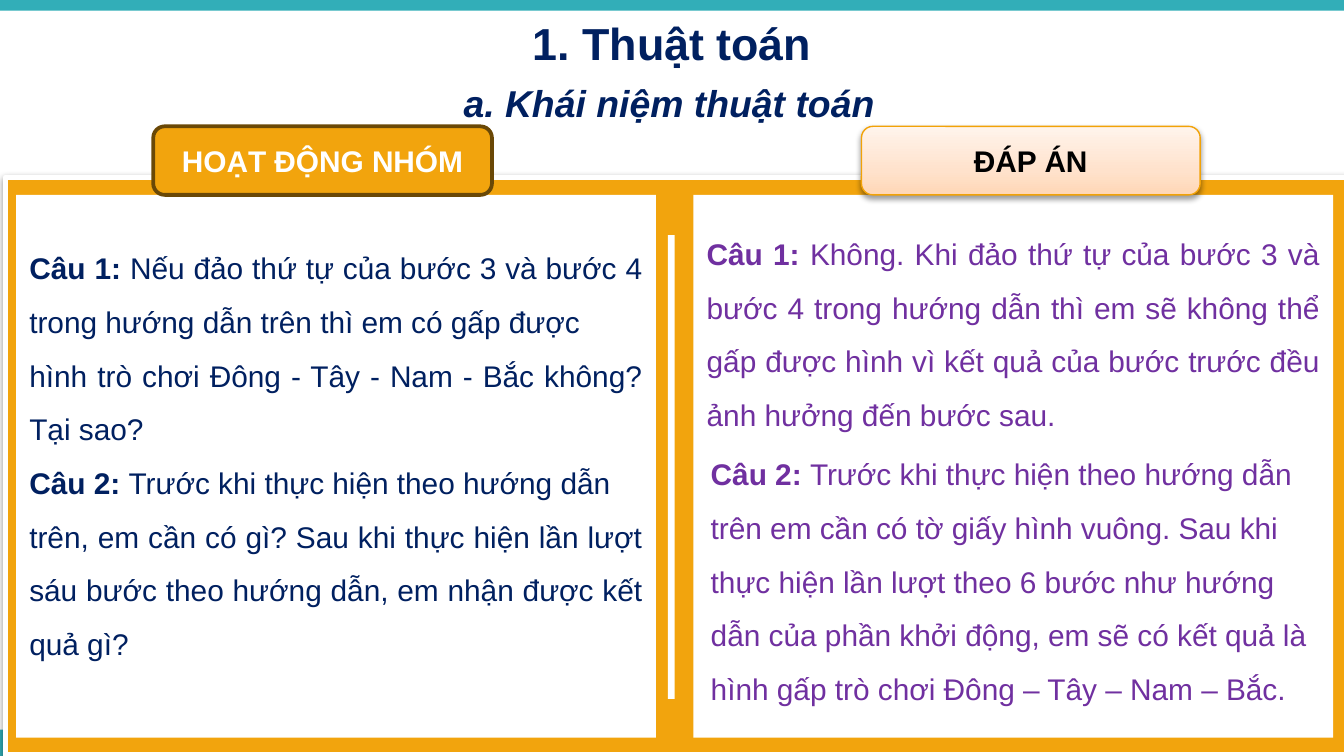
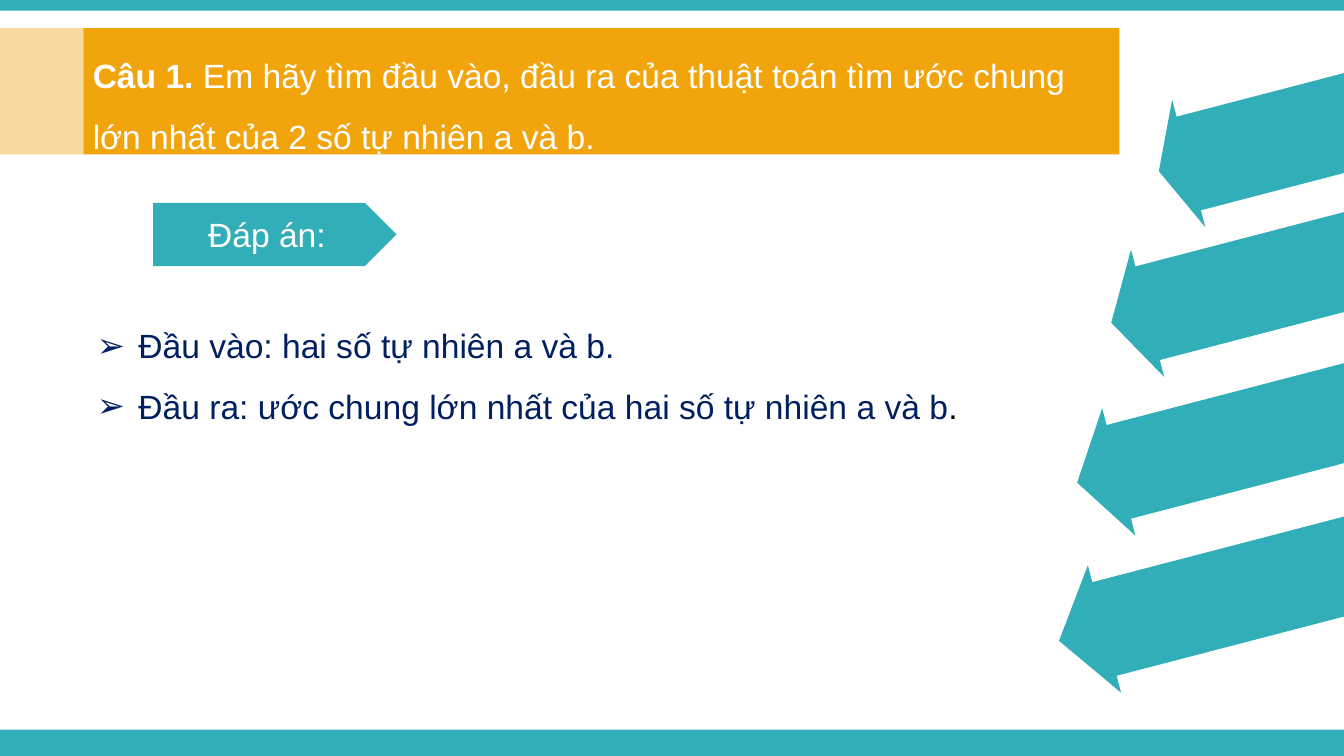
from copy import deepcopy

from lxml.etree import SubElement
from pptx import Presentation
from pptx.dml.color import RGBColor
from pptx.enum.shapes import MSO_SHAPE as Preset
from pptx.enum.text import MSO_ANCHOR as Anchor, MSO_AUTO_SIZE as AutoSize, PP_ALIGN as Align
from pptx.oxml.ns import qn
from pptx.util import Inches, Pt

FONT = "Arial"
COLORS = {
    "teal": "32AEB8",
    "orange": "F2A40D",
    "brown": "6A4806",
    "amber": "F2A207",
    "navy": "002060",
    "purple": "7030A0",
    "white": "FFFFFF",
    "black": "000000",
}
PEACH_STOPS = [(0, "FFD7B6"), (0.35, "FFE2CC"), (1, "FFF4EC")]

PANEL_TOP, PANEL_WIDTH, PANEL_HEIGHT = 1.45, 4.76, 4.04
TAB_TOP, TAB_WIDTH, TAB_HEIGHT = 0.94, 2.52, 0.51

ARROW_HEIGHT, ARROW_ROTATION = 0.98, 345.4
SHAFT_TOP, SHAFT_BOTTOM = 0.13, 0.85
# left, top, width, head length, slant of the far end
ARROWS = [
    (8.59, 0.53, 2.02, 0.23, 0.07),
    (8.23, 1.61, 2.39, 0.28, 0.10),
    (7.97, 2.75, 2.79, 0.32, 0.11),
    (7.83, 3.89, 3.08, 0.35, 0.12),
]

# Each paragraph is a list of (text, bold) runs.
QUESTIONS = [
    [("Câu 1: ", True),
     ("Nếu đảo thứ tự của bước 3 và bước 4 trong hướng dẫn trên thì em có gấp được", False)],
    [("hình trò chơi Đông - Tây - Nam - Bắc không? Tại sao?", False)],
    [("Câu 2: ", True), ("Trước khi thực hiện theo hướng dẫn", False)],
    [("trên, em cần có gì? Sau khi thực hiện lần lượt sáu bước theo hướng dẫn, "
      "em nhận được kết quả gì?", False)],
]
ANSWER_1 = [
    [("Câu 1: ", True),
     ("Không. Khi đảo thứ tự của bước 3 và bước 4 trong hướng dẫn thì em sẽ không thể "
      "gấp được hình vì kết quả của bước trước đều ảnh hưởng đến bước sau.", False)],
]
ANSWER_2 = [
    [("Câu 2: ", True), ("Trước khi thực hiện theo hướng dẫn", False)],
    [("trên em cần có tờ giấy hình vuông. Sau khi", False)],
    [("thực hiện lần lượt theo 6 bước như hướng", False)],
    [("dẫn của phần khởi động, em sẽ có kết quả là", False)],
    [("hình gấp trò chơi Đông – Tây – Nam – Bắc.", False)],
]


def rgb(name):
    return RGBColor.from_string(COLORS[name])


def place(shape, left, top, width, height):
    shape.left, shape.top = Inches(left), Inches(top)
    shape.width, shape.height = Inches(width), Inches(height)


def paint(shape, fill, line=None, line_width=0):
    shape.shadow.inherit = False
    shape.fill.solid()
    shape.fill.fore_color.rgb = rgb(fill)
    if line:
        shape.line.color.rgb = rgb(line)
        shape.line.width = Pt(line_width)
    else:
        shape.line.fill.background()


def add_block(page, preset, left, top, width, height, fill, line=None, line_width=0):
    block = page.shapes.add_shape(
        preset, Inches(left), Inches(top), Inches(width), Inches(height))
    paint(block, fill, line, line_width)
    return block


def add_soft_shadow(shape):
    effects = shape.element.spPr.find(qn("a:effectLst"))
    shadow = SubElement(effects, qn("a:outerShdw"), blurRad=str(Pt(3.1)),
                        dist=str(Pt(1.6)), dir="5400000", rotWithShape="0")
    color = SubElement(shadow, qn("a:srgbClr"), val=COLORS["black"])
    SubElement(color, qn("a:alpha"), val="38000")


def set_opacity(shape, percent):
    color = shape.element.spPr.find(qn("a:solidFill")).find(qn("a:srgbClr"))
    SubElement(color, qn("a:alpha"), val=str(percent * 1000))


def fill_peach(shape):
    """Fill with a three-stop gradient that gets lighter upwards."""
    shape.fill.gradient()
    shape.fill.gradient_angle = 90
    stop_list = shape.element.spPr.find(".//" + qn("a:gsLst"))
    stop_list.insert(1, deepcopy(stop_list[0]))
    for stop, (position, color) in zip(shape.fill.gradient_stops, PEACH_STOPS):
        stop.position = position
        stop.color.rgb = RGBColor.from_string(color)


def add_run(para, text, size, color, bold=False, italic=False):
    span = para.add_run()
    span.text = text
    font = span.font
    font.name, font.size = FONT, Pt(size)
    font.bold, font.italic = bold, italic
    font.color.rgb = rgb(color)


def write(shape, paragraphs, size, color, align=Align.LEFT, anchor=Anchor.TOP,
          spacing=1.0, before=0, italic=False):
    frame = shape.text_frame
    frame.word_wrap = True
    frame.auto_size = AutoSize.NONE
    frame.vertical_anchor = anchor
    for index, runs in enumerate(paragraphs):
        para = frame.add_paragraph() if index else frame.paragraphs[0]
        para.alignment = align
        para.line_spacing = spacing
        para.space_before = Pt(before)
        for text, bold in runs:
            add_run(para, text, size, color, bold, italic)
    return frame


def set_bullet(para, char=None, indent=0):
    """Give the paragraph a hanging bullet, or none without a character."""
    props = para._p.get_or_add_pPr()
    props.set("marL", str(Inches(indent)))
    props.set("indent", str(-Inches(indent)))
    if char:
        SubElement(props, qn("a:buFont"), typeface=FONT)
        SubElement(props, qn("a:buChar"), char=char)
    else:
        SubElement(props, qn("a:buNone"))


def add_heading(placeholder, box, text, size, italic=False):
    place(placeholder, *box)
    frame = write(placeholder, [[(text, True)]], size, "navy", Align.CENTER,
                  Anchor.MIDDLE, before=size * 0.2, italic=italic)
    set_bullet(frame.paragraphs[0])


def add_tab(page, left, text, text_color, fill, line, line_width):
    tab = add_block(page, Preset.ROUNDED_RECTANGLE, left, TAB_TOP, TAB_WIDTH, TAB_HEIGHT,
                    fill, line, line_width)
    write(tab, [[(text, True)]], 16, text_color, Align.CENTER, Anchor.MIDDLE)
    return tab


def add_panel(page, left, paragraphs, color, anchor):
    panel = add_block(page, Preset.RECTANGLE, left, PANEL_TOP, PANEL_WIDTH, PANEL_HEIGHT, "white")
    return write(panel, paragraphs, 16, color, Align.JUSTIFY, anchor, spacing=1.5)


def add_arrow(page, left, top, width, head, slant):
    outline = [
        (width, SHAFT_TOP), (width - slant, SHAFT_BOTTOM), (head, SHAFT_BOTTOM),
        (head, ARROW_HEIGHT), (0, ARROW_HEIGHT / 2), (head, 0), (head, SHAFT_TOP),
    ]
    points = [(Inches(left + x), Inches(top + y)) for x, y in outline]
    builder = page.shapes.build_freeform(*points[0])
    builder.add_line_segments(points[1:], close=True)
    arrow = builder.convert_to_shape()
    paint(arrow, "teal")
    arrow.rotation = ARROW_ROTATION


def add_master_bands(deck, page):
    """Draw the top and bottom bands and hand them to the slide master."""
    for top, height in ((5.43, 0.2), (0, 0.08)):
        band = add_block(page, Preset.RECTANGLE, 0, top, 10, height, "teal")
        deck.slide_master.shapes.element.append(band.element)


def build_group_work(page):
    title, subtitle = page.placeholders
    add_heading(title, (0, 0, 10, 0.63), "1. Thuật toán", 24)
    add_heading(subtitle, (-0.02, 0.61, 10, 0.31), "a. Khái niệm thuật toán", 20, italic=True)

    board = add_block(page, Preset.RECTANGLE, 0.04, 1.32, 10, 4.3, "orange", "white", 3)
    add_soft_shadow(board)
    add_block(page, Preset.RECTANGLE, 4.97, 1.75, 0.05, 3.45, "white")

    questions = add_panel(page, 0.12, QUESTIONS, "navy", Anchor.MIDDLE)
    questions.margin_bottom = Inches(0.34)
    add_tab(page, 1.14, "HOẠT ĐỘNG NHÓM", "white", "orange", "brown", 2)

    answers = add_panel(page, 5.16, ANSWER_1, "purple", Anchor.TOP)
    answers.margin_top = Inches(0.17)
    answer_tab = add_tab(page, 6.41, "ĐÁP ÁN", "black", "white", "amber", 0.75)
    fill_peach(answer_tab)
    add_soft_shadow(answer_tab)

    second_answer = page.shapes.add_textbox(
        Inches(5.19), Inches(3.21), Inches(5), Inches(2.12))
    write(second_answer, ANSWER_2, 16, "purple", Align.JUSTIFY, spacing=1.5)


def build_exercise(page):
    question, answer = page.placeholders
    add_block(page, Preset.RECTANGLE, 0.62, 0.21, 7.71, 0.94, "orange")
    edge = add_block(page, Preset.RECTANGLE, 0, 0.21, 0.62, 0.94, "orange")
    set_opacity(edge, 40)
    for arrow in ARROWS:
        add_arrow(page, *arrow)

    page.shapes.element.append(question.element)  # in front of the orange bar
    place(question, 0.59, 0.21, 7.47, 1.01)
    write(question, [[
        ("Câu 1. ", True),
        ("Em hãy tìm đầu vào, đầu ra của thuật toán tìm ước chung lớn nhất "
         "của 2 số tự nhiên a và b.", False),
    ]], 18, "white", spacing=1.5)

    place(answer, 0.62, 2.22, 6.88, 1.01)
    frame = write(answer, [
        [("Đầu vào: hai số tự nhiên a và b.", False)],
        [("Đầu ra: ước chung lớn nhất của hai số tự nhiên a và b", False)],
    ], 18, "navy", spacing=1.5)
    add_run(frame.paragraphs[-1], ".", 18, "black")
    for para in frame.paragraphs:
        set_bullet(para, "➢", 0.31)

    label = add_block(page, Preset.PENTAGON, 1.14, 1.51, 1.81, 0.47, "teal")
    write(label, [[("Đáp án:", False)]], 18, "white", Align.CENTER, Anchor.MIDDLE)


def main():
    deck = Presentation()
    deck.slide_width = Inches(10)
    deck.slide_height = Inches(10 * 9 / 16)
    layout = deck.slide_layouts.get_by_name("Title and Content")
    group_work, exercise = [deck.slides.add_slide(layout) for _ in range(2)]
    add_master_bands(deck, group_work)
    build_group_work(group_work)
    build_exercise(exercise)
    deck.save("out.pptx")


if __name__ == "__main__":
    main()
